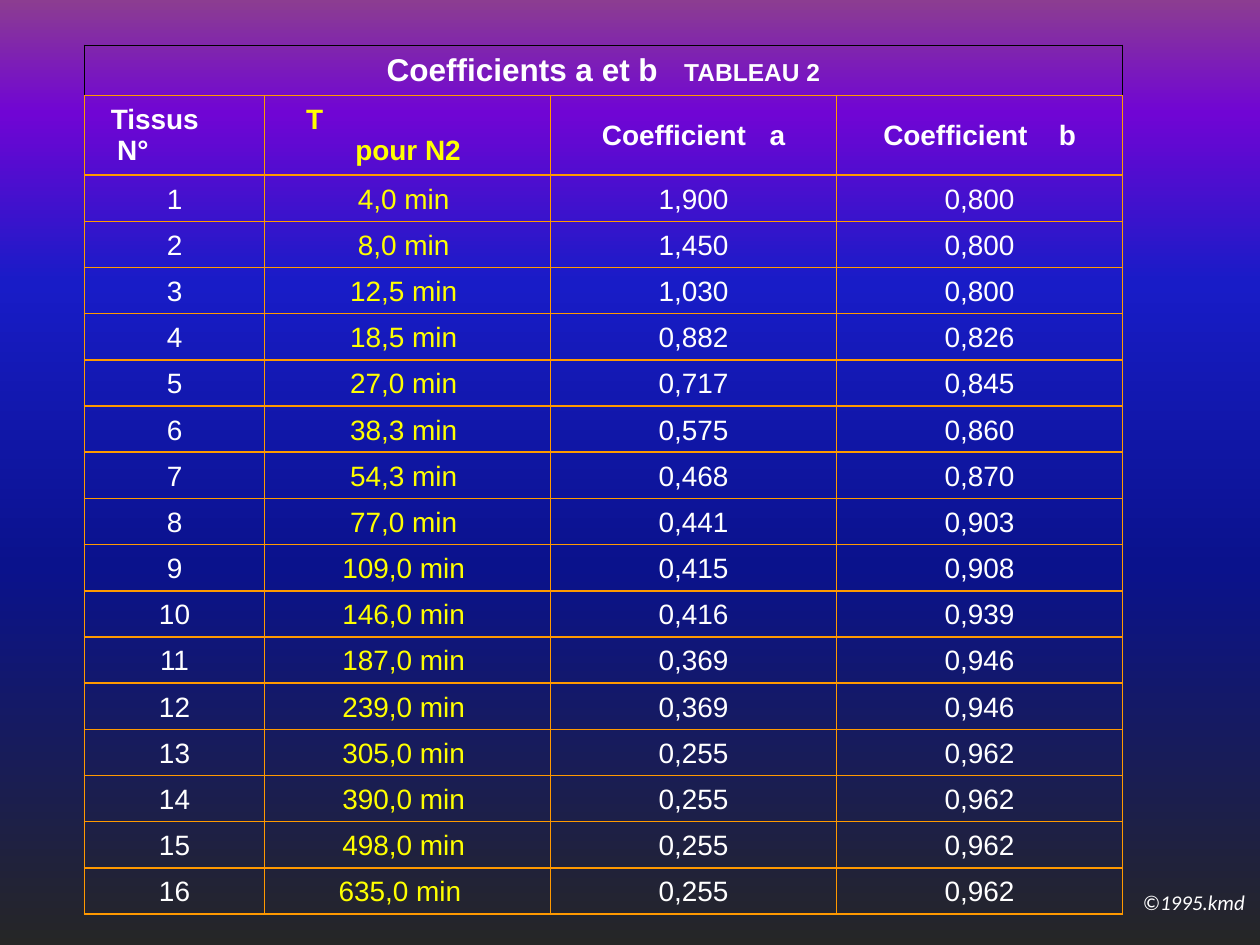
from lxml.etree import SubElement
from pptx import Presentation
from pptx.dml.color import RGBColor
from pptx.enum.text import MSO_ANCHOR, PP_ALIGN
from pptx.oxml import parse_xml
from pptx.oxml.ns import nsdecls, qn
from pptx.util import Inches, Pt

CENTER, LEFT = PP_ALIGN.CENTER, PP_ALIGN.LEFT
MIDDLE, BOTTOM = MSO_ANCHOR.MIDDLE, MSO_ANCHOR.BOTTOM

WHITE, YELLOW, ORANGE, BLACK = "FFFFFF", "FFFF00", "FF9900", "000000"
BACKGROUND = [(0, "262626"), (40, "0A128C"), (70, "181CC7"), (88, "7005D4"), (100, "8C3D91")]

TITLE = [("Coefficients a et b", 18, 0), (" ", 18, 10), ("TABLEAU 2", 14, 0)]
INDENTED_HEADINGS = [
    (WHITE, [("Tissus", 0.11), ("N°", 0.16)]),
    (YELLOW, [("T", 0.23), ("pour N2", 0.62)]),
]
COEFFICIENT_HEADINGS = [("a", 9), ("b", 13.4)]
TISSUES = [
    ("4,0", "1,900", "0,800"),
    ("8,0", "1,450", "0,800"),
    ("12,5", "1,030", "0,800"),
    ("18,5", "0,882", "0,826"),
    ("27,0", "0,717", "0,845"),
    ("38,3", "0,575", "0,860"),
    ("54,3", "0,468", "0,870"),
    ("77,0", "0,441", "0,903"),
    ("109,0", "0,415", "0,908"),
    ("146,0", "0,416", "0,939"),
    ("187,0", "0,369", "0,946"),
    ("239,0", "0,369", "0,946"),
    ("305,0", "0,255", "0,962"),
    ("390,0", "0,255", "0,962"),
    ("498,0", "0,255", "0,962"),
    ("635,0", "0,255", "0,962"),
]
CREDIT = "©1995.kmd"

TABLE_LEFT, TABLE_TOP, TABLE_WIDTH, TABLE_HEIGHT = 0.67, 0.36, 8.24, 6.9
TISSUE_WIDTH = 1.43
TITLE_HEIGHT, HEADING_HEIGHT = 0.4, 0.63


def color(value):
    return RGBColor.from_string(value)


def add_span(para, text, size=16, fill=WHITE, spacing=0, **formats):
    span = para.add_run()
    span.text = text
    span.font.color.rgb = color(fill)
    values = {"name": "Arial", "size": Pt(size), "bold": False, **formats}
    for name, value in values.items():
        setattr(span.font, name, value)
    if spacing:
        span.font._element.set("spc", str(round(spacing * 100)))


def add_para(cell, first, align=CENTER, indent=0):
    frame = cell.text_frame
    para = frame.paragraphs[0] if first else frame.add_paragraph()
    para.alignment = align
    if indent:
        para._p.get_or_add_pPr().set("marL", str(Inches(indent)))
    return para


def set_borders(cell, side_color, bottom_color):
    cell.fill.background()
    properties = cell._tc.get_or_add_tcPr()
    for index, side in enumerate("LRTB"):
        shade = bottom_color if side == "B" else side_color
        properties.insert(index, parse_xml(
            f'<a:ln{side} {nsdecls("a")} w="{Pt(1)}"><a:solidFill>'
            f'<a:srgbClr val="{shade}"/></a:solidFill></a:ln{side}>'))


def paint_background(page):
    fill = page.background.fill
    fill.gradient()
    fill.gradient_angle = 90
    stops = page.element.xpath(".//p:bg//a:gsLst")[0]
    for stop in list(stops):
        stops.remove(stop)
    for percent, shade in BACKGROUND:
        stop = SubElement(stops, qn("a:gs"), pos=str(percent * 1000))
        SubElement(stop, qn("a:srgbClr"), val=shade)


def make_table(page):
    row_count = len(TISSUES) + 2
    table = page.shapes.add_table(
        row_count, 4, Inches(TABLE_LEFT), Inches(TABLE_TOP),
        Inches(TABLE_WIDTH), Inches(TABLE_HEIGHT)).table
    table.first_row = table.horz_banding = False
    value_width = (TABLE_WIDTH - TISSUE_WIDTH) / 3
    for column, width in zip(table.columns, [TISSUE_WIDTH] + [value_width] * 3):
        column.width = Inches(width)
    row_height = (TABLE_HEIGHT - TITLE_HEIGHT - HEADING_HEIGHT) / len(TISSUES)
    heights = [TITLE_HEIGHT, HEADING_HEIGHT] + [row_height] * len(TISSUES)
    for index, (row, height) in enumerate(zip(table.rows, heights)):
        row.height = Inches(height)
        for cell in row.cells:
            cell.vertical_anchor = MIDDLE if index < 2 else BOTTOM
            set_borders(cell, ORANGE if index else BLACK, ORANGE)
    return table


def fill_headings(table):
    title = table.cell(0, 0)
    title.merge(table.cell(0, 3))
    para = add_para(title, True)
    for text, size, spacing in TITLE:
        add_span(para, text, size, spacing=spacing, bold=True)
    for column, (shade, lines) in enumerate(INDENTED_HEADINGS):
        for number, (text, indent) in enumerate(lines):
            para = add_para(table.cell(1, column), number == 0, LEFT, indent)
            add_span(para, text, fill=shade, bold=True)
    for column, (letter, spacing) in enumerate(COEFFICIENT_HEADINGS, 2):
        para = add_para(table.cell(1, column), True)
        for text, gap in [("Coefficient", 0), (" ", spacing), (letter, 0)]:
            add_span(para, text, spacing=gap, bold=True)


def fill_tissues(table):
    for number, (period, a, b) in enumerate(TISSUES, 1):
        for column, text in enumerate([str(number), f"{period} min ", a, b]):
            para = add_para(table.cell(number + 1, column), True)
            add_span(para, text, fill=YELLOW if column == 1 else WHITE)
    table.cell(len(TISSUES) + 1, 1).margin_right = Inches(0.16)


def add_credit(page):
    box = page.shapes.add_textbox(Inches(8.97), Inches(7.01), Inches(1.02), Inches(0.3))
    box.text_frame.word_wrap = False
    add_span(box.text_frame.paragraphs[0], CREDIT, 12, name="Calibri", italic=True)


def main():
    deck = Presentation()
    deck.slide_width, deck.slide_height = Inches(10), Inches(7.5)
    page = deck.slides.add_slide(deck.slide_layouts[6])
    paint_background(page)
    table = make_table(page)
    fill_headings(table)
    fill_tissues(table)
    add_credit(page)
    deck.save("out.pptx")


if __name__ == "__main__":
    main()
